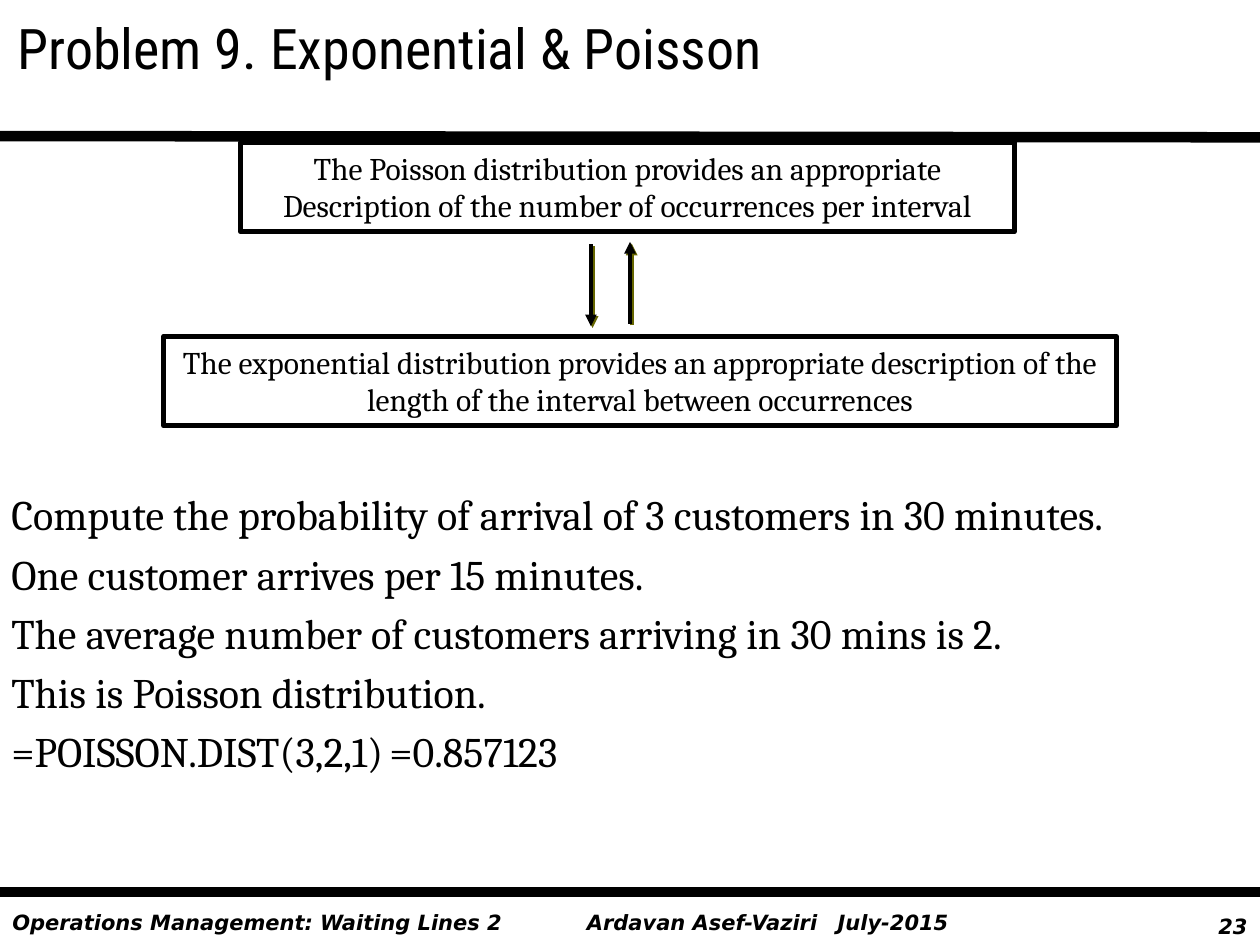
from lxml import etree
from pptx import Presentation
from pptx.dml.color import RGBColor
from pptx.enum.shapes import MSO_CONNECTOR, MSO_SHAPE
from pptx.enum.text import MSO_ANCHOR, MSO_AUTO_SIZE, PP_ALIGN
from pptx.oxml.ns import qn
from pptx.util import Inches, Pt

LEFT, MID, RIGHT = PP_ALIGN.LEFT, PP_ALIGN.CENTER, PP_ALIGN.RIGHT
LINE, RECT = MSO_CONNECTOR.STRAIGHT, MSO_SHAPE.RECTANGLE
COLORS = {"ink": "000000", "shade": "666600"}
INK = RGBColor.from_string(COLORS["ink"])

prs = Presentation()
prs.slide_width, prs.slide_height = Inches(10), Inches(7.5)
slide = prs.slides.add_slide(prs.slide_layouts[1])
shapes = slide.shapes


def write(shape, lines, size, face, align=LEFT, bold=False, tab=None, bare=False):
    """Fill a shape with paragraphs in one style."""
    frame = shape.text_frame
    frame.word_wrap = True
    frame.auto_size = MSO_AUTO_SIZE.NONE
    frame.text = "\n".join(lines)
    for para in frame.paragraphs:
        para.alignment = align
        props = para._p.get_or_add_pPr()
        if bare:
            props.set("marL", "0")
            props.set("indent", "0")
            etree.SubElement(props, qn("a:buNone"))
        if tab and "\t" in para.text:
            stops = etree.SubElement(props, qn("a:tabLst"))
            etree.SubElement(stops, qn("a:tab"), pos=str(Inches(tab)), algn="l")
        for run in para.runs:
            font = run.font
            font.size, font.name = Pt(size), face
            font.bold = font.italic = bold
            font.color.rgb = INK
    return frame


def draw(x1, y1, x2, y2, width):
    """Draw a straight line and return its effect list."""
    line = shapes.add_connector(LINE, Inches(x1), Inches(y1), Inches(x2), Inches(y2))
    line.line.color.rgb = INK
    line.line.width = Pt(width)
    return line, etree.SubElement(line._element.spPr, qn("a:effectLst"))


# Footer
for text, x, y, w, align, tab in [
    ("Operations Management: Waiting Lines 2", 0, 7.17, 4.67, LEFT, None),
    ("Ardavan Asef-Vaziri\tJuly-2015", 4.56, 7.17, 3.35, LEFT, 1.99),
    ("23", 9.25, 7.2, 0.75, RIGHT, None),
]:
    box = shapes.add_textbox(Inches(x), Inches(y), Inches(w), Inches(0.3))
    write(box, [text], 12, "DejaVu Sans", align, True, tab)

# Rules above and below the content
draw(0, 1.08, 10, 1.09, 6)
draw(0, 7.08, 10, 7.08, 6)

# Arrows between the two boxes
for x, start, end in [(4.69, 1.94, 2.59), (5, 2.57, 1.92)]:
    arrow, effects = draw(x, start, x, end, 2.25)
    etree.SubElement(arrow.line._get_or_add_ln(), qn("a:tailEnd"), type="triangle")
    shade = etree.SubElement(effects, qn("a:outerShdw"), dist=str(Pt(1.4)),
                             dir="2700000", algn="ctr", rotWithShape="0")
    etree.SubElement(shade, qn("a:srgbClr"), val=COLORS["shade"])

# Boxes for the two distributions
for lines, x, y, w in [
    (["The Poisson distribution provides an appropriate",
      "Description of the number of occurrences per interval"], 1.91, 1.13, 6.14),
    (["The exponential distribution provides an appropriate description of the "
      "length of the interval between occurrences"], 1.3, 2.67, 7.56),
]:
    box = shapes.add_shape(RECT, Inches(x), Inches(y), Inches(w), Inches(0.71))
    box.shadow.inherit = False
    box.fill.background()
    box.line.color.rgb = INK
    box.line.width = Pt(3)
    frame = write(box, lines, 18, "Cambria", MID)
    frame.vertical_anchor = MSO_ANCHOR.TOP

# Title
title = shapes.title
title.left, title.top = Inches(0.04), Inches(0)
title.width, title.height = Inches(9.96), Inches(0.75)
frame = write(title, ["Problem 9. Exponential & Poisson"], 32, "Roboto Condensed")
frame.vertical_anchor = MSO_ANCHOR.MIDDLE

# Worked solution
body = slide.placeholders[1]
body.left, body.top = Inches(-0.01), Inches(3.83)
body.width, body.height = Inches(9.58), Inches(2.41)
frame = write(body, [
    "Compute the probability of arrival of 3 customers in 30 minutes.",
    "One customer arrives per 15 minutes.",
    "The average number of customers arriving in 30 mins is 2.",
    "This is Poisson distribution.",
    "=POISSON.DIST(3,2,1)\t=0.857123",
], 24, "Cambria", tab=3.09, bare=True)
for i, para in enumerate(frame.paragraphs):
    para.space_before = Pt(5 if i else 0)

prs.save("out.pptx")
